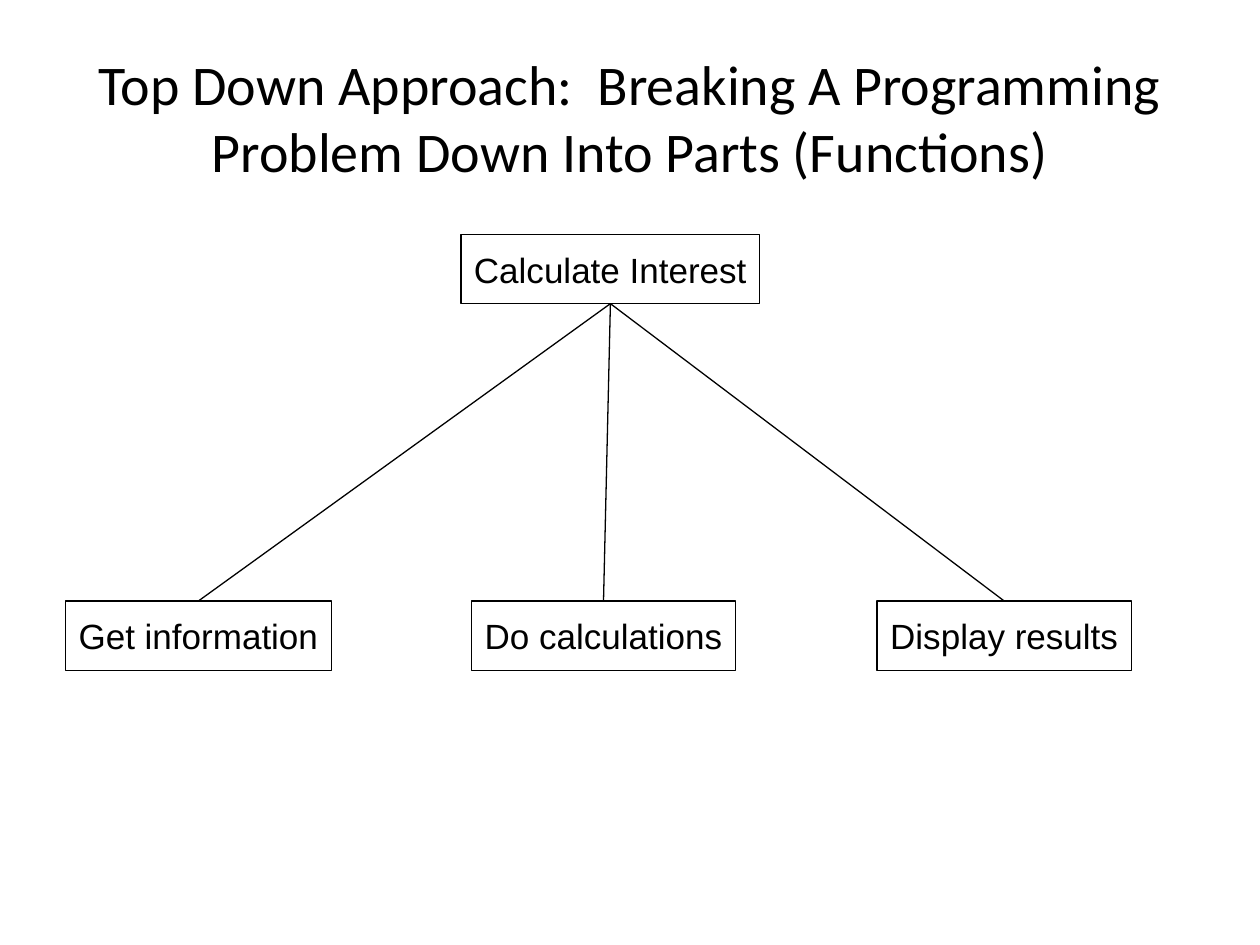
"""Build a slide that splits a programming problem into three functions."""
from dataclasses import dataclass

from pptx import Presentation
from pptx.dml.color import RGBColor
from pptx.enum.shapes import MSO_CONNECTOR as Conn, MSO_SHAPE as Kind
from pptx.enum.text import MSO_ANCHOR as Anchor, MSO_AUTO_SIZE as Fit, PP_ALIGN as Align
from pptx.oxml.ns import qn
from pptx.shapes.autoshape import Shape
from pptx.shapes.shapetree import SlideShapes as Tree
from pptx.text.text import TextFrame as Frame
from pptx.util import Inches, Pt

BLACK = RGBColor(0, 0, 0)
EDGE, STEP = 0.52, 3.22
TOP, DROP = 1.86, 2.91
TALL = 0.55
THIN = Pt(0.75)


@dataclass(frozen=True)
class Box:
    text: str
    col: float
    row: int
    wide: float


ROOT = Box("Calculate Interest", 0.975, 0, 2.37)
PARTS = (
    Box("Get information", 0, 1, 2.11),
    Box("Do calculations", 1, 1, 2.1),
    Box("Display results", 2, 1, 2.02),
)


def write(frame: Frame, text: str, *, font: str, size: int,
          wrap: bool = True, inset: float = 0.1) -> None:
    frame.text = text
    frame.word_wrap = wrap
    frame.auto_size = Fit.NONE
    frame.vertical_anchor = Anchor.MIDDLE
    frame.margin_left = frame.margin_right = Inches(inset)
    frame.margin_top = frame.margin_bottom = Inches(inset)
    para = frame.paragraphs[0]
    para.alignment = Align.CENTER
    para.font.name = font
    para.font.size = Pt(size)
    para.font.color.rgb = BLACK


def draw(tree: Tree, box: Box) -> Shape:
    shape = tree.add_shape(
        Kind.RECTANGLE, Inches(EDGE + box.col * STEP),
        Inches(TOP + box.row * DROP), Inches(box.wide), Inches(TALL))
    shape.shadow.inherit = False
    shape.fill.background()
    shape.line.color.rgb = BLACK
    shape.line.width = THIN
    write(shape.text_frame, box.text, font="Arial", size=20, wrap=False)
    return shape


def link(tree: Tree, head: Shape, part: Shape) -> None:
    line = tree.add_connector(Conn.STRAIGHT, 0, 0, 0, 0)
    line.begin_connect(head, 2)
    line.end_connect(part, 0)
    line.line.color.rgb = BLACK
    line.line.width = THIN
    props = line._element.spPr
    props.append(props.makeelement(qn("a:effectLst"), {}))


def main() -> None:
    deck = Presentation()
    deck.slide_width, deck.slide_height = Inches(10), Inches(7.5)
    slide = deck.slides.add_slide(deck.slide_layouts[5])
    tree = slide.shapes
    title = tree.title
    title.left, title.top = Inches(0.5), Inches(0.3)
    title.width, title.height = Inches(9), Inches(1.25)
    write(title.text_frame,
          "Top Down Approach:  Breaking A Programming Problem Down Into Parts (Functions)",
          font="Calibri", size=32, inset=0.05)
    head = draw(tree, ROOT)
    for part in PARTS:
        link(tree, head, draw(tree, part))
    deck.save("out.pptx")


if __name__ == "__main__":
    main()
